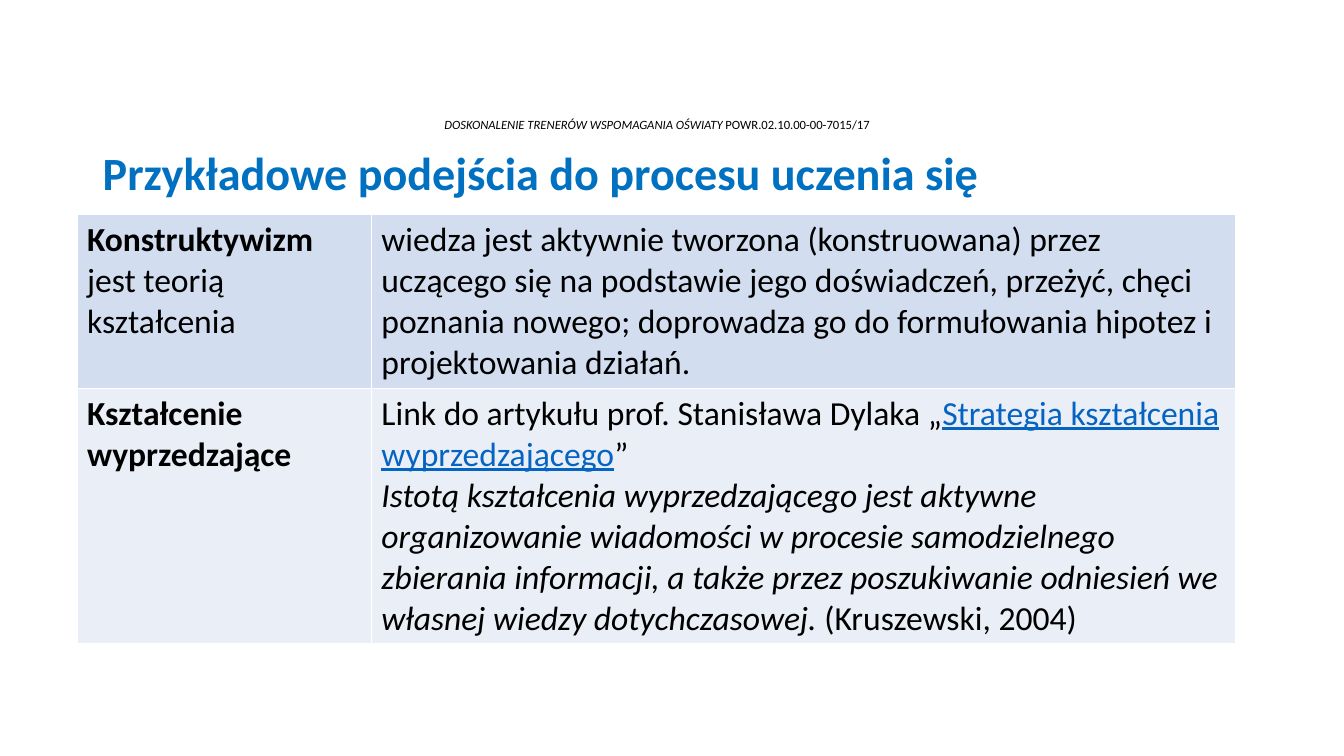
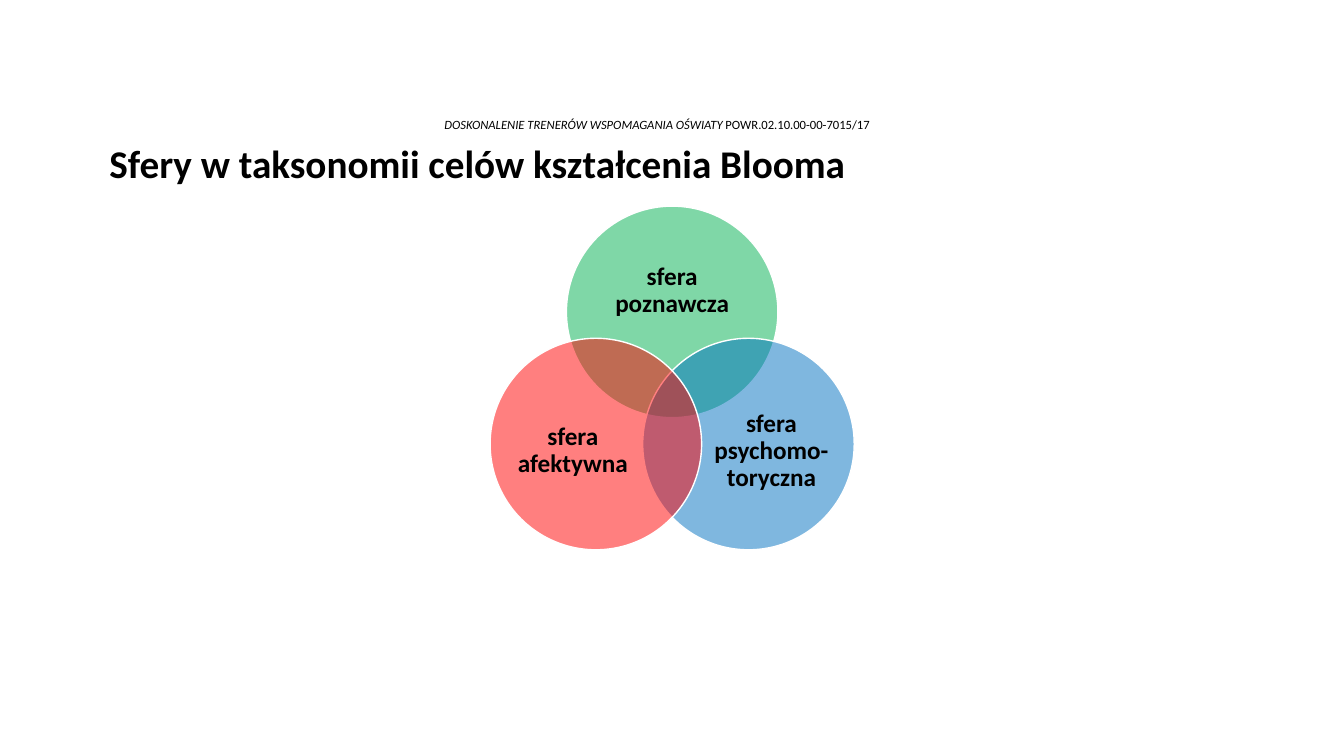
from math import cos, radians, sin

from lxml import etree
from pptx import Presentation
from pptx.dml.color import RGBColor
from pptx.enum.shapes import MSO_SHAPE
from pptx.enum.text import MSO_ANCHOR, PP_ALIGN
from pptx.oxml.ns import qn
from pptx.util import Cm, Pt

# Shared style
FONT = "Calibri"
BLACK = RGBColor(0x00, 0x00, 0x00)
WHITE = RGBColor(0xFF, 0xFF, 0xFF)
BLUE = RGBColor(0x00, 0x70, 0xC0)
GREEN = RGBColor(0x00, 0xB0, 0x50)
RED = RGBColor(0xFF, 0x00, 0x00)
LINK = RGBColor(0x05, 0x63, 0xC1)
ROW_FILLS = [RGBColor(0xD2, 0xDE, 0xEF), RGBColor(0xEA, 0xEF, 0xF7)]
LEFT, CENTER = PP_ALIGN.LEFT, PP_ALIGN.CENTER
MIDDLE = MSO_ANCHOR.MIDDLE
ELLIPSE = MSO_SHAPE.OVAL

# Run styles
PLAIN, BOLD, ITALIC = {}, {"bold": True}, {"italic": True}
LINKED = {"underline": True, "color": LINK}

# Table rows: cells, each a list of paragraphs made of (text, style) runs
APPROACHES = [
    [
        [[("Konstruktywizm", BOLD), (" jest teorią kształcenia", PLAIN)]],
        [[("wiedza jest aktywnie tworzona (konstruowana) przez uczącego się "
           "na podstawie jego doświadczeń, przeżyć, chęci poznania nowego; "
           "doprowadza go do formułowania hipotez i projektowania działań.",
           PLAIN)]],
    ],
    [
        [[("Kształcenie wyprzedzające", BOLD)]],
        [[("Link do artykułu prof. Stanisława Dylaka „", PLAIN),
          ("Strategia kształcenia wyprzedzającego", LINKED),
          ("”", PLAIN)],
         [("Istotą kształcenia wyprzedzającego jest aktywne organizowanie "
           "wiadomości w procesie samodzielnego zbierania informacji, a także "
           "przez poszukiwanie odniesień we własnej wiedzy dotychczasowej.",
           ITALIC),
          (" (Kruszewski, 2004)", PLAIN)]],
    ],
]

# Circles: text, colour, angle, label offset (x, y) and label size in cm
SPHERES = [
    ("sfera poznawcza", GREEN, -90, (0, -0.53), (3.9, 2.4)),
    ("sfera psychomo-toryczna", BLUE, 30, (0.58, 0.18), (3.2, 2.95)),
    ("sfera afektywna", RED, 150, (-0.58, 0.18), (3.2, 2.95)),
]


def add_runs(p, runs, size):
    for text, style in runs:
        r = p.add_run()
        r.text = text
        r.font.name = FONT
        r.font.size = Pt(size)
        r.font.bold = style.get("bold", False)
        r.font.italic = style.get("italic", False)
        r.font.underline = style.get("underline", False)
        r.font.color.rgb = style.get("color", BLACK)


def add_text(s, x, y, w, h, runs, size, align=LEFT, inset=True):
    tf = s.shapes.add_textbox(Cm(x), Cm(y), Cm(w), Cm(h)).text_frame
    tf.word_wrap = True
    tf.vertical_anchor = MIDDLE
    if not inset:
        tf.margin_left = tf.margin_right = tf.margin_top = tf.margin_bottom = 0
    p = tf.paragraphs[0]
    p.alignment = align
    p.line_spacing = 0.9
    add_runs(p, runs, size)


def add_slide(prs):
    """Blank slide with the project line shared by all slides."""
    s = prs.slides.add_slide(prs.slide_layouts[6])
    project = [("DOSKONALENIE TRENERÓW WSPOMAGANIA OŚWIATY", ITALIC),
               (" POWR.02.10.00-00-7015/17", PLAIN)]
    add_text(s, 2, 2.77, 29.12, 0.76, project, 9, CENTER)
    return s


def add_title(s, x, y, text, size, color):
    add_text(s, x, y, 29.2, 2.57, [(text, {"bold": True, "color": color})], size)


def add_table(s, x, y, widths, heights, rows):
    table = s.shapes.add_table(len(rows), len(widths), Cm(x), Cm(y),
                               Cm(sum(widths)), Cm(sum(heights))).table
    table.first_row = table.horz_banding = False
    for column, width in zip(table.columns, widths):
        column.width = Cm(width)
    for i, (cells, height) in enumerate(zip(rows, heights)):
        table.rows[i].height = Cm(height)
        for j, paragraphs in enumerate(cells):
            cell = table.cell(i, j)
            cell.fill.solid()
            cell.fill.fore_color.rgb = ROW_FILLS[i % 2]
            tf = cell.text_frame
            for k, runs in enumerate(paragraphs):
                add_runs(tf.add_paragraph() if k else tf.paragraphs[0], runs, 24)


def add_circle(s, cx, cy, diameter, color):
    sp = s.shapes.add_shape(ELLIPSE, Cm(cx - diameter / 2), Cm(cy - diameter / 2),
                            Cm(diameter), Cm(diameter))
    sp.shadow.inherit = False
    sp.fill.solid()
    sp.fill.fore_color.rgb = color
    sp.line.color.rgb = WHITE
    sp.line.width = Pt(1)
    # Half-transparent fill
    clr = sp.fill._xPr.find(qn("a:solidFill"))[0]
    etree.SubElement(clr, qn("a:alpha")).set("val", "50000")


def add_venn(s, cx, cy, radius, diameter):
    for text, color, angle, (dx, dy), (w, h) in SPHERES:
        x = cx + radius * cos(radians(angle))
        y = cy + radius * sin(radians(angle))
        add_circle(s, x, y, diameter, color)
        add_text(s, x + dx - w / 2, y + dy - h / 2, w, h,
                 [(text, BOLD)], 18, CENTER, inset=False)


def main():
    prs = Presentation()
    prs.slide_width, prs.slide_height = Cm(33.87), Cm(19.05)

    # Approaches to learning
    s = add_slide(prs)
    add_title(s, 2.34, 3.15, "Przykładowe podejścia do procesu uczenia się", 33, BLUE)
    add_table(s, 1.94, 5.41, [7.42, 21.79], [4.37, 6.45], APPROACHES)

    # Bloom's spheres
    s = add_slide(prs)
    add_title(s, 2.51, 2.9, "Sfery w taksonomii celów kształcenia Blooma", 28, BLACK)
    add_venn(s, 16.94, 10.08, 2.22, 5.33)

    prs.save("out.pptx")


if __name__ == "__main__":
    main()
